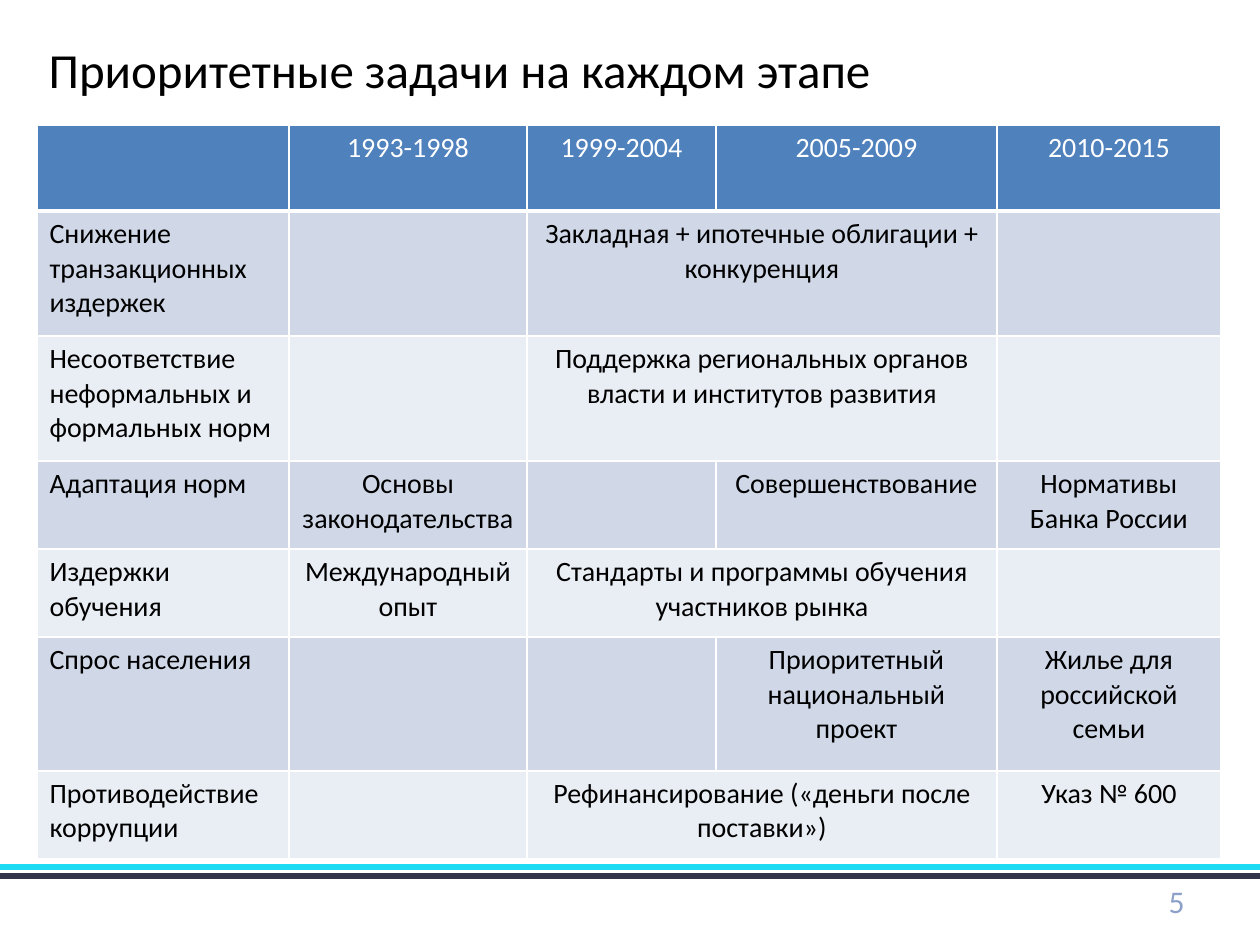
from lxml import etree
from pptx import Presentation
from pptx.dml.color import RGBColor
from pptx.enum.shapes import MSO_CONNECTOR
from pptx.enum.text import MSO_ANCHOR, MSO_AUTO_SIZE, PP_ALIGN
from pptx.oxml.ns import qn
from pptx.util import Emu, Pt

LEFT, CENTER, RIGHT = PP_ALIGN.LEFT, PP_ALIGN.CENTER, PP_ALIGN.RIGHT
TITLE_ONLY = 5

TITLE = "Приоритетные задачи на каждом этапе"
PAGE = "5"
MERGE = None  # continues the cell on its left
ROWS = [
    ["", "1993-1998", "1999-2004", "2005-2009", "2010-2015"],
    ["Снижение транзакционных издержек", "",
     "Закладная + ипотечные облигации + конкуренция", MERGE, ""],
    ["Несоответствие неформальных и формальных норм", "",
     "Поддержка региональных органов власти и институтов развития", MERGE, ""],
    ["Адаптация норм", "Основы\vзаконодательства", "",
     "Совершенствование", "Нормативы Банка России"],
    ["Издержки обучения", "Международный опыт",
     "Стандарты и программы обучения участников рынка", MERGE, ""],
    ["Спрос населения", "", "",
     "Приоритетный национальный проект", "Жилье для российской семьи"],
    ["Противодействие коррупции", "",
     "Рефинансирование («деньги после поставки»)", MERGE, "Указ № 600"],
]

# Lengths in px
SLIDE = (1260, 945)
TITLE_BOX = (36, 33, 856, 72)
TABLE_ORIGIN = (37, 125)
COLUMN_WIDTHS = [252, 238, 189, 281, 224]
ROW_HEIGHTS = [86, 125, 125, 88, 88, 134, 88]
PAGE_BOX = (903, 876, 294, 50)
FOOTER_RULES = [(867, "cyan"), (876, "navy")]

THEME = {
    "font": "Calibri",
    "title_size": 28, "table_size": 16, "page_size": 18,
    "rule_width": 3, "border": 1, "header_border": 3,
    "text": "000000", "header_text": "FFFFFF", "page": "8CA0CA",
    "header": "4F81BD", "bands": ["D0D8E8", "E9EDF4"], "grid": "FFFFFF",
    "cyan": "1EDBF4", "navy": "33334B",
}


def px(*lengths):
    return [Emu(round(length * 914400 / 126)) for length in lengths]


def style(frame, size, color, align):
    paragraph = frame.paragraphs[0]
    paragraph.alignment = align
    paragraph.font.name = THEME["font"]
    paragraph.font.size = Pt(size)
    paragraph.font.color.rgb = RGBColor.from_string(color)


def set_borders(cell, bottom_width):
    properties = cell._tc.get_or_add_tcPr()
    for side in "LRTB":
        width = bottom_width if side == "B" else THEME["border"]
        line = etree.SubElement(properties, qn(f"a:ln{side}"), w=str(Pt(width)))
        fill = etree.SubElement(line, qn("a:solidFill"))
        etree.SubElement(fill, qn("a:srgbClr"), val=THEME["grid"])


def add_footer_rules(slide):
    for y, color in FOOTER_RULES:
        rule = slide.shapes.add_connector(
            MSO_CONNECTOR.STRAIGHT, *px(0, y, SLIDE[0], y))
        rule.line.color.rgb = RGBColor.from_string(THEME[color])
        rule.line.width = Pt(THEME["rule_width"])
        etree.SubElement(rule._element.spPr, qn("a:effectLst"))


def add_title(slide):
    title = slide.shapes.title
    title.left, title.top, title.width, title.height = px(*TITLE_BOX)
    frame = title.text_frame
    frame.text = TITLE
    frame.word_wrap = False
    frame.auto_size = MSO_AUTO_SIZE.SHAPE_TO_FIT_TEXT
    frame.vertical_anchor = MSO_ANCHOR.TOP
    style(frame, THEME["title_size"], THEME["text"], LEFT)


def add_stage_table(slide):
    size = (sum(COLUMN_WIDTHS), sum(ROW_HEIGHTS))
    table = slide.shapes.add_table(
        len(ROWS), len(COLUMN_WIDTHS), *px(*TABLE_ORIGIN, *size)).table
    for column, width in zip(table.columns, px(*COLUMN_WIDTHS)):
        column.width = width
    for row, height in zip(table.rows, px(*ROW_HEIGHTS)):
        row.height = height

    for r, texts in enumerate(ROWS):
        is_header = r == 0
        fill = THEME["header"] if is_header else THEME["bands"][(r - 1) % 2]
        color = THEME["header_text" if is_header else "text"]
        bottom = THEME["header_border" if is_header else "border"]
        for c, text in enumerate(texts):
            cell = table.cell(r, c)
            set_borders(cell, bottom)
            cell.fill.solid()
            cell.fill.fore_color.rgb = RGBColor.from_string(fill)
            if text is MERGE:
                table.cell(r, c - 1).merge(cell)
                continue
            cell.text = text
            style(cell.text_frame, THEME["table_size"], color,
                  CENTER if c else LEFT)


def add_page_number(slide):
    frame = slide.shapes.add_textbox(*px(*PAGE_BOX)).text_frame
    frame.word_wrap = True
    frame.vertical_anchor = MSO_ANCHOR.MIDDLE
    frame.text = PAGE
    style(frame, THEME["page_size"], THEME["page"], RIGHT)


def main():
    presentation = Presentation()
    presentation.slide_width, presentation.slide_height = px(*SLIDE)
    slide = presentation.slides.add_slide(presentation.slide_layouts[TITLE_ONLY])
    add_footer_rules(slide)
    add_title(slide)
    add_stage_table(slide)
    add_page_number(slide)
    presentation.save("out.pptx")


if __name__ == "__main__":
    main()
